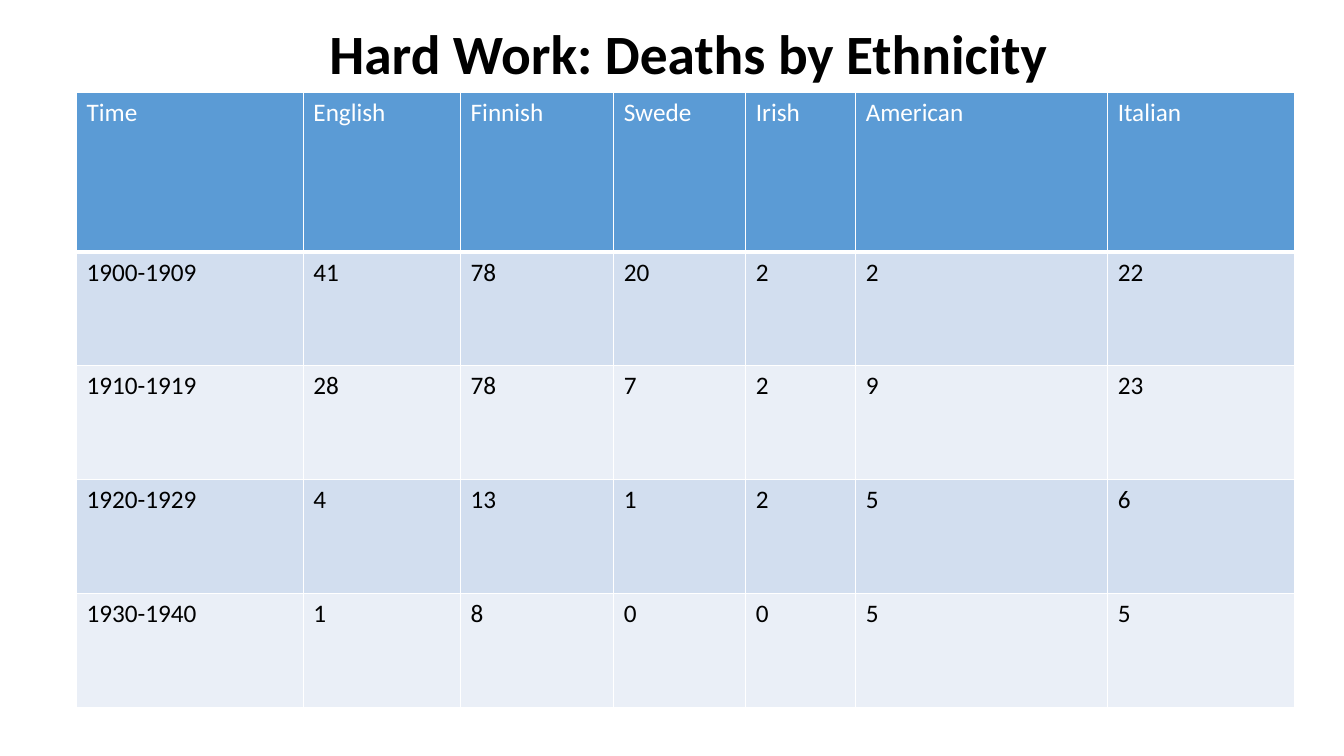
from typing import NamedTuple

from lxml import etree
from pptx import Presentation
from pptx.dml.color import RGBColor
from pptx.enum.text import MSO_ANCHOR
from pptx.oxml.ns import qn
from pptx.util import Pt

MIDDLE = MSO_ANCHOR.MIDDLE
FONT = "Calibri"
BLACK, WHITE = "000000", "FFFFFF"
HEADER_BLUE, BAND_DARK, BAND_LIGHT = "5B9BD5", "D2DEEF", "EAEFF7"
TABLE_LEFT, TABLE_TOP = 54.72, 66.24
HEADER_HEIGHT, ROW_HEIGHT = 113.76, 81.36


class Column(NamedTuple):
    ethnicity: str
    width: float


class Period(NamedTuple):
    years: str
    deaths: tuple[int, ...]


COLUMNS = [
    Column("Time", 162),
    Column("English", 112.32),
    Column("Finnish", 109.44),
    Column("Swede", 94.32),
    Column("Irish", 78.48),
    Column("American", 180),
    Column("Italian", 133.2),
]
PERIODS = [
    Period("1900-1909", (41, 78, 20, 2, 2, 22)),
    Period("1910-1919", (28, 78, 7, 2, 9, 23)),
    Period("1920-1929", (4, 13, 1, 2, 5, 6)),
    Period("1930-1940", (1, 8, 0, 0, 5, 5)),
]


def rgb(color: str) -> RGBColor:
    return RGBColor.from_string(color)


def write(tf, text: str, *, size: float = 18, color: str = BLACK,
          bold: bool = False, spacing: float = 1) -> None:
    p = tf.paragraphs[0]
    p.line_spacing = spacing
    r = p.add_run()
    r.text = text
    r.font.name = FONT
    r.font.size = Pt(size)
    r.font.bold = bold
    r.font.color.rgb = rgb(color)


def add_borders(cell, bottom: float) -> None:
    """Outline a cell in white; call it before the fill is set."""
    tc_pr = cell._tc.get_or_add_tcPr()
    for tag, width in (("lnL", 1), ("lnR", 1), ("lnT", 1), ("lnB", bottom)):
        ln = etree.SubElement(tc_pr, qn(f"a:{tag}"), w=str(Pt(width)))
        fill = etree.SubElement(ln, qn("a:solidFill"))
        etree.SubElement(fill, qn("a:srgbClr"), val=WHITE)


def fill_row(table, row: int, texts: list[str], *, fill: str,
             color: str = BLACK, bottom: float = 1) -> None:
    for col, text in enumerate(texts):
        cell = table.cell(row, col)
        add_borders(cell, bottom)
        cell.fill.solid()
        cell.fill.fore_color.rgb = rgb(fill)
        write(cell.text_frame, text, color=color)


def add_title(s) -> None:
    sp = s.shapes.add_textbox(Pt(228.24), Pt(21.6), Pt(599.76), Pt(38.16))
    tf = sp.text_frame
    tf.word_wrap = True
    tf.vertical_anchor = MIDDLE
    write(tf, "Hard Work: Deaths by Ethnicity", size=39.6, bold=True, spacing=0.9)


def add_deaths_table(s) -> None:
    width = sum(c.width for c in COLUMNS)
    height = HEADER_HEIGHT + ROW_HEIGHT * len(PERIODS)
    table = s.shapes.add_table(len(PERIODS) + 1, len(COLUMNS), Pt(TABLE_LEFT),
                               Pt(TABLE_TOP), Pt(width), Pt(height)).table
    table.first_row = table.horz_banding = False
    for col, column in zip(table.columns, COLUMNS):
        col.width = Pt(column.width)
    for i, row in enumerate(table.rows):
        row.height = Pt(ROW_HEIGHT if i else HEADER_HEIGHT)

    fill_row(table, 0, [c.ethnicity for c in COLUMNS],
             fill=HEADER_BLUE, color=WHITE, bottom=3)
    for i, period in enumerate(PERIODS, start=1):
        fill_row(table, i, [period.years, *map(str, period.deaths)],
                 fill=BAND_DARK if i % 2 else BAND_LIGHT)


def main() -> None:
    prs = Presentation()
    prs.slide_width, prs.slide_height = Pt(960), Pt(540)
    s = prs.slides.add_slide(prs.slide_layouts[6])
    add_title(s)
    add_deaths_table(s)
    prs.save("out.pptx")


if __name__ == "__main__":
    main()
